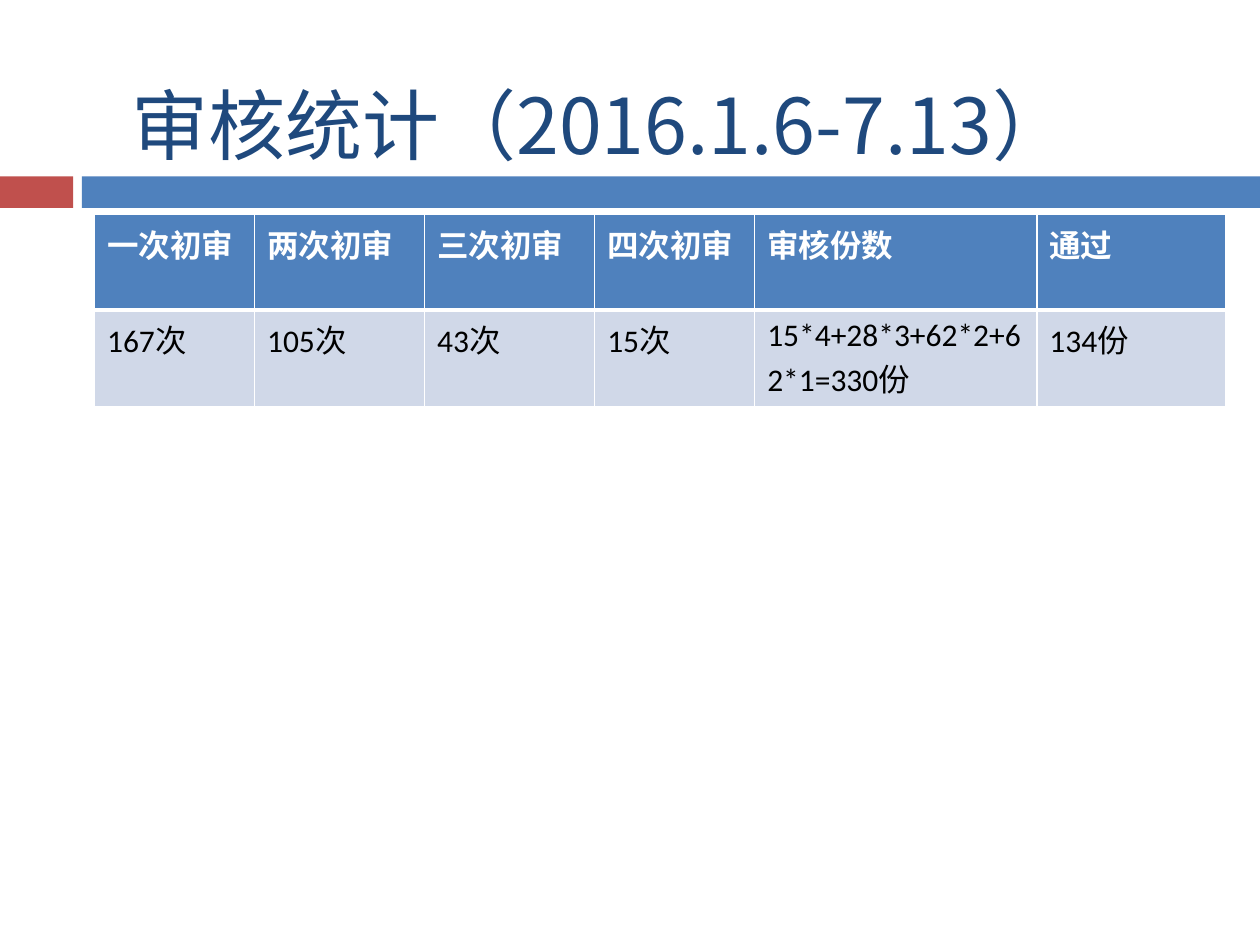
from dataclasses import dataclass

from lxml.etree import SubElement
from pptx import Presentation
from pptx.dml.color import RGBColor
from pptx.enum.shapes import MSO_SHAPE
from pptx.enum.text import MSO_ANCHOR, PP_ALIGN
from pptx.oxml import parse_xml
from pptx.oxml.ns import nsdecls, qn
from pptx.util import Inches, Pt


@dataclass(frozen=True)
class Theme:
    """Colours, fonts and type sizes of the slide."""
    navy: str = "1F497D"
    blue: str = "4F81BD"
    red: str = "C0504D"
    pale: str = "D0D8E8"
    white: str = "FFFFFF"
    black: str = "000000"
    latin: str = "Calibri"
    cjk: str = "Noto Sans CJK SC"
    title_size: int = 44
    table_size: int = 18


THEME = Theme()
HEADERS = ["一次初审", "两次初审", "三次初审", "四次初审", "审核份数", "通过"]
VALUES = ["167次", "105次", "43次", "15次", "15*4+28*3+62*2+62*1=330份", "134份"]
COL_WIDTHS = [1.27, 1.35, 1.35, 1.27, 2.24, 1.5]


def write_text(tf, text, color, **font):
    """Put one formatted run into a text frame and return its paragraph."""
    p = tf.paragraphs[0]
    r = p.add_run()
    r.text = text
    for name, value in font.items():
        setattr(r.font, name, value)
    r.font.color.rgb = RGBColor.from_string(color)
    SubElement(r.font._element, qn("a:ea"), typeface=THEME.cjk)
    return p


def add_title(slide, box, text):
    """Place the title placeholder in its box."""
    sp = slide.shapes.title
    for name, value in zip(("left", "top", "width", "height"), box):
        setattr(sp, name, Inches(value))
    tf = sp.text_frame
    tf.word_wrap = True
    tf.vertical_anchor = MSO_ANCHOR.MIDDLE
    p = write_text(tf, text, THEME.navy, size=Pt(THEME.title_size), name=THEME.cjk)
    p.alignment = PP_ALIGN.CENTER


def add_band(slide, box, tab=0.58, gap=0.07):
    """Draw the red tab and the blue bar across the box."""
    x, y, w, h = box
    start = tab + gap
    for left, width, color in ((x, tab, THEME.red), (x + start, w - start, THEME.blue)):
        sp = slide.shapes.add_shape(
            MSO_SHAPE.RECTANGLE, Inches(left), Inches(y), Inches(width), Inches(h))
        sp.shadow.inherit = False
        sp.fill.solid()
        sp.fill.fore_color.rgb = RGBColor.from_string(color)
        sp.line.fill.background()


def set_borders(cell, **widths):
    """Give a cell white borders of the widths in points."""
    tc_pr = cell._tc.get_or_add_tcPr()
    for i, (side, width) in enumerate(widths.items()):
        tc_pr.insert(i, parse_xml(
            f'<a:ln{side} {nsdecls("a")} w="{Pt(width)}"><a:solidFill>'
            f'<a:srgbClr val="{THEME.white}"/></a:solidFill></a:ln{side}>'))


def add_stats_table(slide, box):
    """Build the table of review counts in its box."""
    rows = [(HEADERS, THEME.blue, THEME.white, True, 1, 3),
            (VALUES, THEME.pale, THEME.black, False, 3, 1)]
    frame = slide.shapes.add_table(len(rows), len(HEADERS), *map(Inches, box))
    table = frame.table
    for col, width in zip(table.columns, COL_WIDTHS):
        col.width = Inches(width)
    for row, (texts, fill, color, bold, top, bottom) in zip(table.rows, rows):
        for cell, text in zip(row.cells, texts):
            cell.fill.solid()
            cell.fill.fore_color.rgb = RGBColor.from_string(fill)
            set_borders(cell, L=1, R=1, T=top, B=bottom)
            write_text(cell.text_frame, text, color, bold=bold,
                       size=Pt(THEME.table_size), name=THEME.latin)


def main():
    """Build and save the slide."""
    prs = Presentation()
    prs.slide_width, prs.slide_height = Inches(10), Inches(7.5)
    slide = prs.slides.add_slide(prs.slide_layouts[5])
    add_band(slide, (0, 1.4, 10, 0.25))
    add_title(slide, (0.75, 0.68, 8.03, 0.61), "审核统计（2016.1.6-7.13）")
    add_stats_table(slide, (0.75, 1.7, sum(COL_WIDTHS), 1.52))
    prs.save("out.pptx")


if __name__ == "__main__":
    main()
